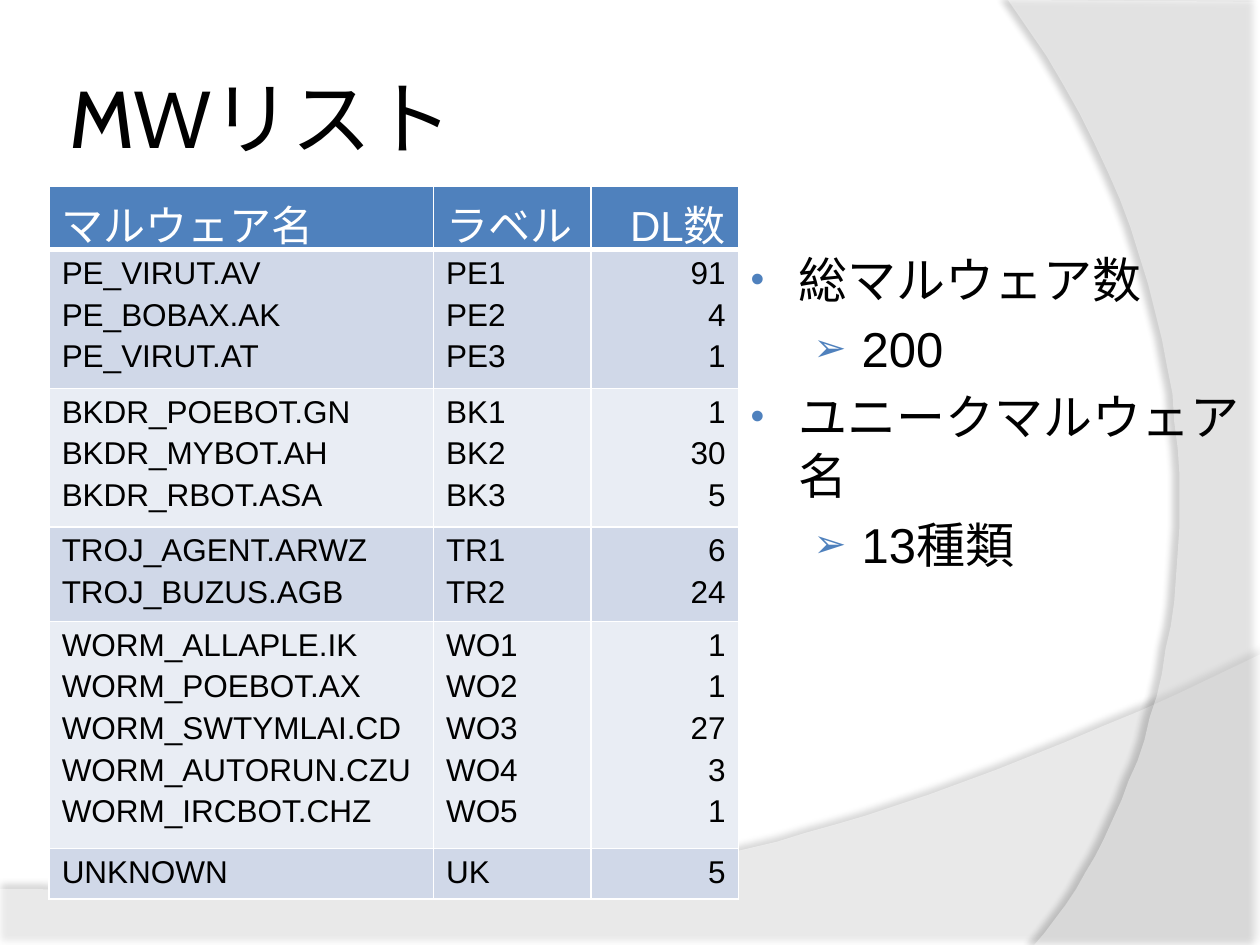
import pptx
import pptx.dml.color
import pptx.enum.text
import pptx.oxml
import pptx.oxml.ns
import pptx.util
from pptx.util import Pt

DRAWING_NS = pptx.oxml.ns.nsdecls("a")
RIGHT = pptx.enum.text.PP_ALIGN.RIGHT
WHITE, BLACK, BLUE = "FFFFFF", "000000", "4F81BD"
BANDS = ("D0D8E8", "E9EDF4")

HEADINGS = ("マルウェア名", "ラベル", "DL数")
COLUMN_WIDTHS = (219.6, 90, 84.2)
ROW_HEIGHTS = (27.4, 76.3, 76.3, 51.8, 126, 27.4)
MALWARE_GROUPS = (
    (("PE_VIRUT.AV", "PE1", "91"), ("PE_BOBAX.AK", "PE2", "4"),
     ("PE_VIRUT.AT", "PE3", "1")),
    (("BKDR_POEBOT.GN", "BK1", "1"), ("BKDR_MYBOT.AH", "BK2", "30"),
     ("BKDR_RBOT.ASA", "BK3", "5")),
    (("TROJ_AGENT.ARWZ", "TR1", "6"), ("TROJ_BUZUS.AGB", "TR2", "24")),
    (("WORM_ALLAPLE.IK", "WO1", "1"), ("WORM_POEBOT.AX", "WO2", "1"),
     ("WORM_SWTYMLAI.CD", "WO3", "27"), ("WORM_AUTORUN.CZU", "WO4", "3"),
     ("WORM_IRCBOT.CHZ", "WO5", "1")),
    (("UNKNOWN", "UK", "5"),),
)
SUMMARY = ((0, "総マルウェア数"), (1, "200"),
           (0, "ユニークマルウェア名"), (1, "13種類"))
BULLETS = ("•", "➢")
INDENTS = (27.4, 63.4)


def color(hex_string):
    return pptx.dml.color.RGBColor.from_string(hex_string)


def xml(markup):
    head, tail = markup.split(">", 1)
    if head.endswith("/"):
        return pptx.oxml.parse_xml(f"{head[:-1]} {DRAWING_NS}/>{tail}")
    return pptx.oxml.parse_xml(f"{head} {DRAWING_NS}>{tail}")


def solid(hex_string, extra=""):
    return f'<a:solidFill><a:srgbClr val="{hex_string}">{extra}</a:srgbClr></a:solidFill>'


def write(para, text, size, font="Arial", ink=BLACK):
    span = para.add_run()
    span.text = text
    span.font.size = Pt(size)
    span.font.name = font
    span.font.bold = False
    span.font.color.rgb = color(ink)


def space_before(para):
    """Leave a gap of a fifth of a line above the paragraph."""
    properties = para._p.get_or_add_pPr()
    properties.append(xml('<a:spcBef><a:spcPct val="20000"/></a:spcBef>'))


def paragraphs(frame, count):
    return [frame.paragraphs[0]] + [frame.add_paragraph() for _ in range(count - 1)]


def bezier(start, first, second, end, steps=40):
    """Points along a cubic curve, without its start."""
    points = []
    for step in range(1, steps + 1):
        t = step / steps
        weights = ((1 - t) ** 3, 3 * t * (1 - t) ** 2, 3 * t * t * (1 - t), t ** 3)
        points.append(tuple(sum(w * p[axis] for w, p in zip(weights, (start, first, second, end)))
                            for axis in (0, 1)))
    return points


def add_swoosh(page, points, opacity, shadow_opacity, distance, direction):
    """Translucent white shape with a soft shadow along its curved edge."""
    builder = page.shapes.build_freeform(*points[0], scale=Pt(1))
    builder.add_line_segments(points[1:], close=True)
    swoosh = builder.convert_to_shape()
    swoosh.line.fill.background()
    swoosh.fill.solid()
    swoosh.fill.fore_color.rgb = color(WHITE)
    tint = swoosh._element.spPr.find(".//" + pptx.oxml.ns.qn("a:srgbClr"))
    tint.append(xml(f'<a:alpha val="{opacity * 1000}"/>'))
    swoosh._element.spPr.append(xml(
        f'<a:effectLst><a:outerShdw blurRad="{Pt(4)}" dist="{Pt(distance)}" '
        f'dir="{direction * 60000}" algn="ctr" rotWithShape="0"><a:srgbClr val="{BLACK}">'
        f'<a:alpha val="{shadow_opacity * 1000}"/></a:srgbClr></a:outerShdw></a:effectLst>'))


def add_background(page, width, height):
    wave = bezier((width, 374.4), (402.5, 524.9), (281.5, 517.7), (0, 507.6))
    add_swoosh(page, [(0, height), (width, height), (width, 374.4)] + wave, 45, 35, 3.5, 270)
    arc = bezier((591, height), (673.2, 445.7), (733, 216), (576, 0))
    add_swoosh(page, [(width, 1.4), (width, height), (591, height)] + arc, 40, 45, 4, 180)


def add_title(page, left, top, width, height):
    box = page.shapes.add_textbox(Pt(left), Pt(top), Pt(width), Pt(height))
    frame = box.text_frame
    frame.word_wrap = True
    frame.vertical_anchor = pptx.enum.text.MSO_ANCHOR.MIDDLE
    frame.margin_left = frame.margin_right = Pt(3.6)
    write(frame.paragraphs[0], "MWリスト", 46, "Cabin")


def style_cell(cell, fill, bottom_width):
    properties = cell._tc.get_or_add_tcPr()
    for side, width in (("L", 1), ("R", 1), ("T", 1), ("B", bottom_width)):
        properties.append(xml(f'<a:ln{side} w="{Pt(width)}">{solid(WHITE)}</a:ln{side}>'))
    cell.fill.solid()
    cell.fill.fore_color.rgb = color(fill)


def add_malware_table(page, left, top):
    table = page.shapes.add_table(
        len(ROW_HEIGHTS), len(COLUMN_WIDTHS), Pt(left), Pt(top),
        Pt(sum(COLUMN_WIDTHS)), Pt(sum(ROW_HEIGHTS))).table
    table.first_row = table.horz_banding = False
    for column, width in zip(table.columns, COLUMN_WIDTHS):
        column.width = Pt(width)
    for row, height in zip(table.rows, ROW_HEIGHTS):
        row.height = Pt(height)
    for row_index, group in enumerate(((HEADINGS,),) + MALWARE_GROUPS):
        header = row_index == 0
        for column_index, texts in enumerate(zip(*group)):
            cell = table.cell(row_index, column_index)
            style_cell(cell, BLUE if header else BANDS[(row_index - 1) % 2], 3 if header else 1)
            for para, text in zip(paragraphs(cell.text_frame, len(texts)), texts):
                if column_index == 2:
                    para.alignment = RIGHT
                if len(texts) > 1:
                    space_before(para)
                write(para, text, 24 if header else 18, ink=WHITE if header else BLACK)


def add_summary(page, left, top, width, height):
    box = page.shapes.add_textbox(Pt(left), Pt(top), Pt(width), Pt(height))
    frame = box.text_frame
    frame.word_wrap = True
    for para, (level, text) in zip(paragraphs(frame, len(SUMMARY)), SUMMARY):
        para.level = level
        space_before(para)
        properties = para._p.get_or_add_pPr()
        properties.set("marL", str(Pt(INDENTS[level])))
        properties.set("indent", str(-Pt(INDENTS[0])))
        for markup in (f'<a:buClr><a:srgbClr val="{BLUE}"/></a:buClr>',
                       '<a:buSzPct val="80000"/>', '<a:buFont typeface="Arial"/>',
                       f'<a:buChar char="{BULLETS[level]}"/>'):
            properties.append(xml(markup))
        write(para, text, 28)


def main():
    deck = pptx.Presentation()
    deck.slide_width, deck.slide_height = Pt(720), Pt(540)
    page = deck.slides.add_slide(deck.slide_layouts[6])
    add_background(page, 720, 540)
    add_title(page, 36, 21.6, 588, 90)
    add_malware_table(page, 28.1, 106.6)
    add_summary(page, 421.9, 139, 303.8, 356.4)
    deck.save("out.pptx")


if __name__ == "__main__":
    main()
